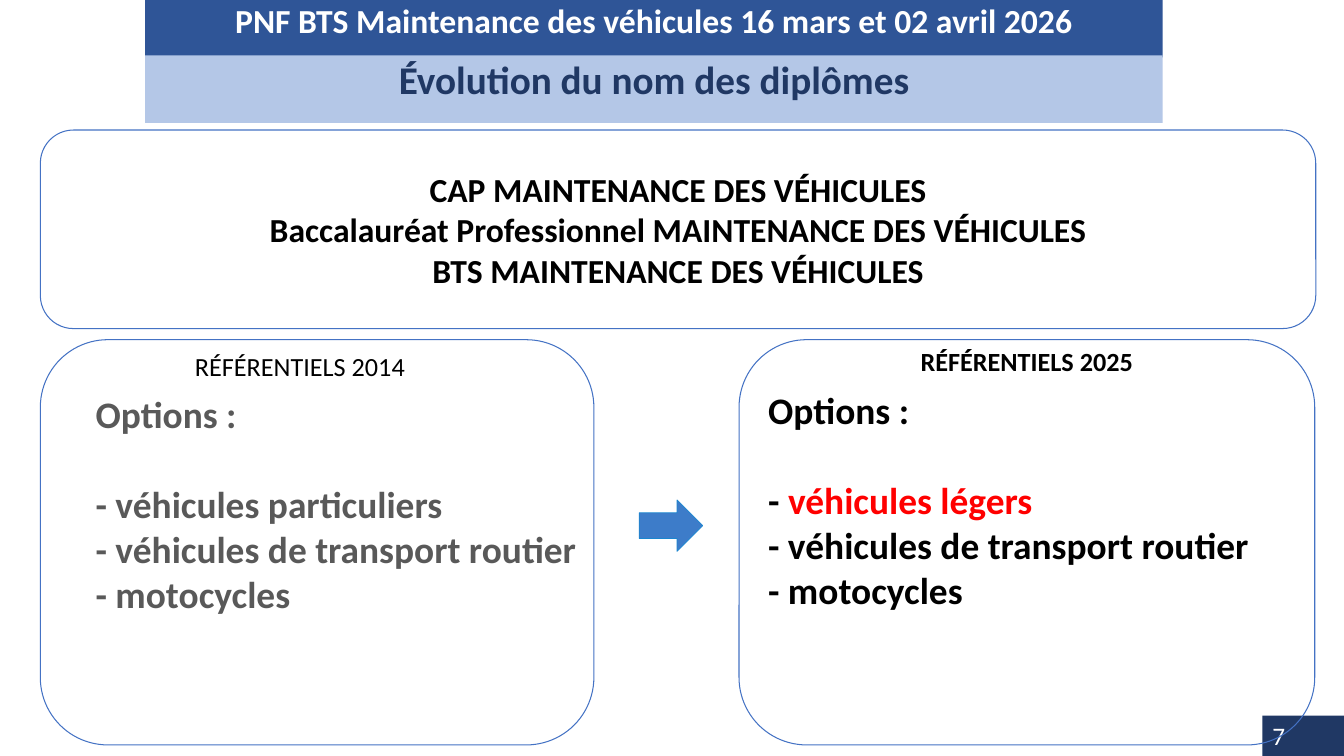
"""Build the slide on how the names of the vehicle maintenance diplomas change."""
from dataclasses import dataclass

from pptx import Presentation
from pptx.dml.color import RGBColor
from pptx.enum.shapes import MSO_SHAPE
from pptx.enum.text import MSO_ANCHOR, PP_ALIGN
from pptx.util import Emu, Pt

RECT = MSO_SHAPE.RECTANGLE
ROUNDED = MSO_SHAPE.ROUNDED_RECTANGLE
ARROW = MSO_SHAPE.RIGHT_ARROW
TOP, MIDDLE = MSO_ANCHOR.TOP, MSO_ANCHOR.MIDDLE
LEFT, CENTER = PP_ALIGN.LEFT, PP_ALIGN.CENTER
PX = 9144


@dataclass(frozen=True)
class Theme:
    font: str = "Calibri"
    navy: str = "203864"
    blue: str = "2F5597"
    pale: str = "B4C7E7"
    outline: str = "4472C4"
    arrow: str = "3D7CC9"
    arrow_line: str = "1A86D0"
    white: str = "FFFFFF"
    black: str = "000000"
    gray: str = "595959"
    red: str = "FF0000"
    title: float = 28
    options: float = 26.7
    body: float = 24
    caption: float = 18.7
    number: float = 18


T = Theme()


def rgb(color):
    return RGBColor.from_string(color)


def px(*lengths):
    return [Emu(n * PX) for n in lengths]


def add_shape(s, kind, box, fill=None, line=None, width=0.75):
    sp = s.shapes.add_shape(kind, *px(*box))
    sp.shadow.inherit = False
    if fill:
        sp.fill.solid()
        sp.fill.fore_color.rgb = rgb(fill)
    else:
        sp.fill.background()
    if line:
        sp.line.color.rgb = rgb(line)
        sp.line.width = Pt(width)
    else:
        sp.line.fill.background()
    return sp


def write(sp, lines, size, color, bold=True, align=CENTER, anchor=TOP, spacing=None):
    tf = sp.text_frame
    tf.word_wrap = True
    tf.vertical_anchor = anchor
    for i, line in enumerate(lines):
        p = tf.paragraphs[0] if i == 0 else tf.add_paragraph()
        p.text = line
        p.alignment = align
        if spacing:
            p.line_spacing = spacing
        p.font.name = T.font
        p.font.size = Pt(size)
        p.font.bold = bold
        p.font.color.rgb = rgb(color)
    return tf


def add_band(s, top, height, text, size, fill, color):
    sp = add_shape(s, RECT, (144, top, 1009, height), fill)
    write(sp, [text], size, color, spacing=0.9)


def add_caption(s, x, y, text, bold):
    sp = s.shapes.add_textbox(*px(x, y, 273, 42))
    write(sp, [text], T.caption, T.black, bold)


def add_options(s, x, y, first, color, first_color):
    sp = s.shapes.add_textbox(*px(x, y, 540, 235))
    lines = ["Options :", "- ", "- véhicules de transport routier", "- motocycles"]
    tf = write(sp, lines, T.options, color, align=LEFT)
    p = tf.paragraphs[1]
    p.space_before = Pt(32.5)
    r = p.add_run()
    r.text = first
    r.font.color.rgb = rgb(first_color)


def main():
    prs = Presentation()
    prs.slide_width, prs.slide_height = px(1333, 750)
    s = prs.slides.add_slide(prs.slide_layouts[6])

    number = add_shape(s, RECT, (1252, 710, 81, 40), T.navy)
    write(number, ["7"], T.number, T.white, bold=False, align=LEFT)

    add_band(s, 0, 57, "PNF BTS Maintenance des véhicules 16 mars et 02 avril 2026",
             T.body, T.blue, T.white)
    add_band(s, 55, 67, "Évolution du nom des diplômes", T.title, T.pale, T.navy)

    for x, width in ((733, 571), (40, 549)):
        add_shape(s, ROUNDED, (x, 337, width, 402), line=T.outline)
    diplomas = add_shape(s, ROUNDED, (40, 129, 1265, 197), line=T.outline)
    write(diplomas, ["CAP MAINTENANCE DES VÉHICULES",
                     "Baccalauréat Professionnel MAINTENANCE DES VÉHICULES",
                     "BTS MAINTENANCE DES VÉHICULES"], T.body, T.black, anchor=MIDDLE)

    add_options(s, 85, 383, "véhicules particuliers", T.gray, T.gray)
    add_options(s, 752, 379, "véhicules légers", T.black, T.red)
    add_caption(s, 161, 343, "RÉFÉRENTIELS 2014", False)
    add_caption(s, 882, 338, "RÉFÉRENTIELS 2025", True)
    add_shape(s, ARROW, (634, 496, 63, 51), T.arrow, T.arrow_line, 0.5)

    prs.save("out.pptx")


if __name__ == "__main__":
    main()
